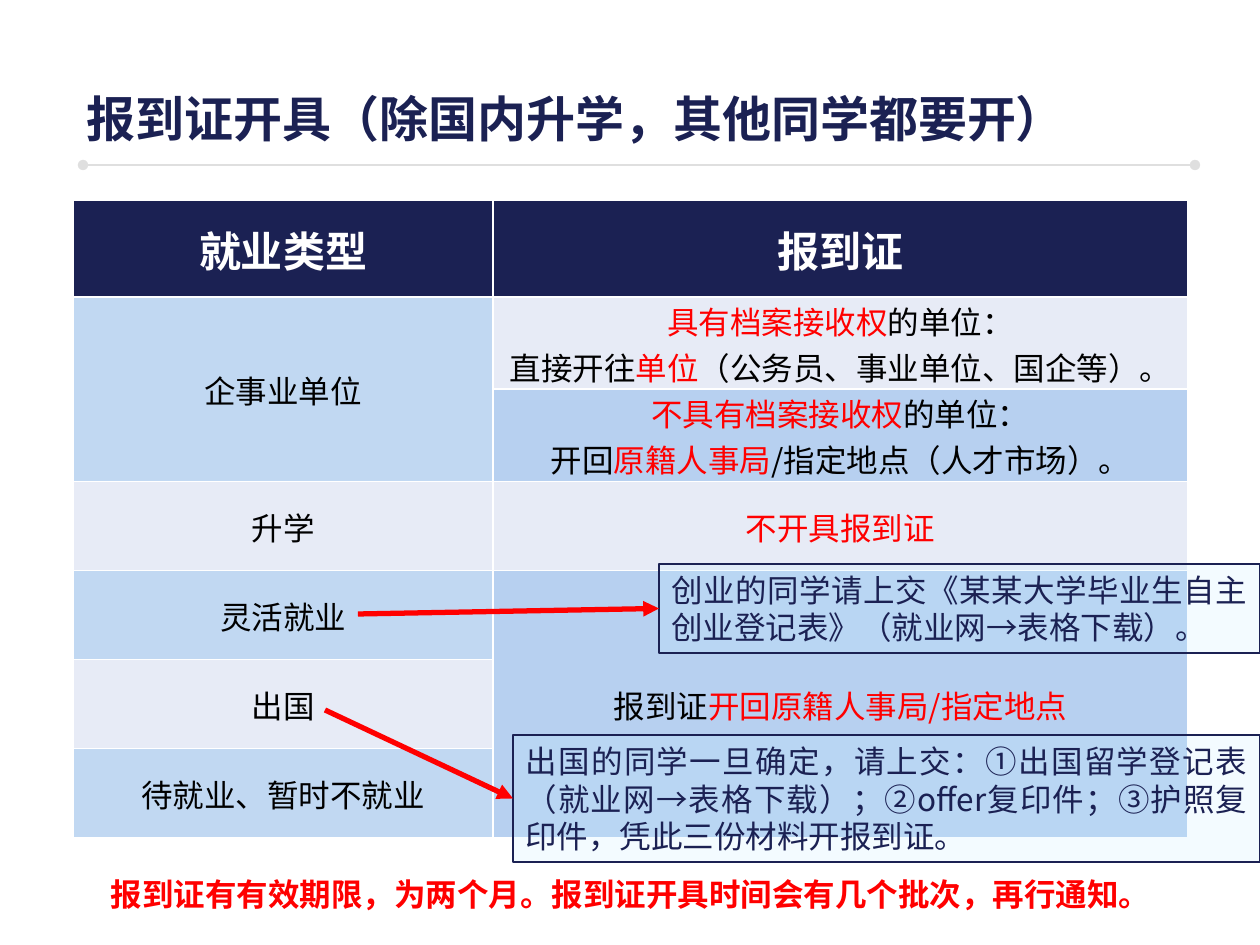
"""Build the slide on which graduates need a registration certificate."""
import pptx
import pptx.util
import pptx.dml.color
import pptx.enum.shapes
import pptx.enum.text
import pptx.oxml
import pptx.oxml.ns
import lxml.etree

PX = 914400 / 126
FONT = "Noto Sans CJK SC"
NAVY, RED, BLACK, WHITE = "1B2153", "FF0000", "000000", "FFFFFF"
PALE, LIGHT, MID = "E7EBF6", "C1D8F2", "B7D0F0"
ALIGN = pptx.enum.text.PP_ALIGN
qn = pptx.oxml.ns.qn
rgb = pptx.dml.color.RGBColor.from_string


def px(*values):
    return [pptx.util.Emu(round(v * PX)) for v in values]


def write(tf, paragraphs, size, bold=False, align=ALIGN.CENTER, spacing=None):
    for i, runs in enumerate(paragraphs):
        p = tf.paragraphs[0] if i == 0 else tf.add_paragraph()
        p.alignment = align
        if spacing:
            p.line_spacing = pptx.util.Pt(spacing)
        for text, color in runs:
            r = p.add_run()
            r.text = text
            r.font.size = pptx.util.Pt(size)
            r.font.bold = bold
            r.font.name = FONT
            r.font.color.rgb = rgb(color)
            lxml.etree.SubElement(r.font._element, qn("a:ea"), typeface=FONT)


prs = pptx.Presentation()
prs.slide_width, prs.slide_height = px(1260, 945)
s = prs.slides.add_slide(prs.slide_layouts[6])

rows = [
    [([[("就业类型", WHITE)]], NAVY), ([[("报到证", WHITE)]], NAVY)],
    [([[("企事业单位", BLACK)]], LIGHT),
     ([[("具有档案接收权", RED), ("的单位：", BLACK)],
       [("直接开往", BLACK), ("单位", RED), ("（公务员、事业单位、国企等）。", BLACK)]], PALE)],
    [([], LIGHT),
     ([[("不具有档案接收权", RED), ("的单位：", BLACK)],
       [("开回", BLACK), ("原籍人事局", RED), ("/指定地点（人才市场）。", BLACK)]], MID)],
    [([[("升学", BLACK)]], PALE), ([[("不开具报到证", RED)]], PALE)],
    [([[("灵活就业", BLACK)]], LIGHT),
     ([[("报到证", BLACK), ("开回原籍人事局/指定地点", RED)]], MID)],
    [([[("出国", BLACK)]], PALE), ([], MID)],
    [([[("待就业、暂时不就业", BLACK)]], LIGHT), ([], MID)],
]
table = s.shapes.add_table(len(rows), 2, *px(73, 200, 1115, 633)).table
for column, width in zip(table.columns, px(420, 695)):
    column.width = width
for i, row in enumerate(rows):
    table.rows[i].height = px(89 if i else 97)[0]
    for j, (paragraphs, color) in enumerate(row):
        cell = table.cell(i, j)
        cell.margin_left, cell.margin_top, cell.margin_right, cell.margin_bottom = px(1, 1, 1, 0)
        cell.vertical_anchor = pptx.enum.text.MSO_ANCHOR.MIDDLE
        write(cell.text_frame, paragraphs, 18 if i else 24, bold=i == 0)
        tcPr = cell._tc.get_or_add_tcPr()
        for side in ("a:lnL", "a:lnR", "a:lnT", "a:lnB"):
            ln = lxml.etree.SubElement(tcPr, qn(side), w="12700")
            fill = lxml.etree.SubElement(ln, qn("a:solidFill"))
            lxml.etree.SubElement(fill, qn("a:srgbClr"), val=WHITE)
        cell.fill.solid()
        cell.fill.fore_color.rgb = rgb(color)
table.cell(1, 0).merge(table.cell(2, 0))
table.cell(4, 1).merge(table.cell(6, 1))

notes = []
for box, text in [
    ((659, 564, 601, 89), "创业的同学请上交《某某大学毕业生自主创业登记表》（就业网→表格下载）。"),
    ((513, 735, 747, 127), "出国的同学一旦确定，请上交：①出国留学登记表（就业网→表格下载）；"
                           "②offer复印件；③护照复印件，凭此三份材料开报到证。"),
]:
    sp = s.shapes.add_shape(pptx.enum.shapes.MSO_SHAPE.RECTANGLE, *px(*box))
    sp.shadow.inherit = False
    sp.fill.solid()
    sp.fill.fore_color.rgb = rgb("C4EFFF")
    clr = sp._element.spPr.find(qn("a:solidFill"))[0]
    lxml.etree.SubElement(clr, qn("a:alpha"), val="20000")
    sp.line.color.rgb = rgb(NAVY)
    sp.line.width = pptx.util.Pt(0.75)
    sp.text_frame.word_wrap = True
    write(sp.text_frame, [[(text, NAVY)]], 18, align=ALIGN.JUSTIFY, spacing=21.6)
    notes.append(sp)

for box, text, size, color, align in [
    ((57, 869, 1147, 50), "报到证有有效期限，为两个月。报到证开具时间会有几个批次，再行通知。", 18, RED, ALIGN.CENTER),
    ((74, 82, 1121, 72), "报到证开具（除国内升学，其他同学都要开）", 28, NAVY, ALIGN.LEFT),
]:
    tf = s.shapes.add_textbox(*px(*box)).text_frame
    tf.word_wrap = True
    write(tf, [[(text, color)]], size, bold=True, align=align, spacing=size * 1.2)

for ends, color, width, head, tail, target in [
    ((325, 710, 513, 798), RED, 3, None, "triangle", notes[1]),
    ((358, 614, 659, 608), RED, 3, None, "triangle", notes[0]),
    ((83, 165, 1195, 165), "DFDFDF", 1, "oval", "oval", None),
]:
    line = s.shapes.add_connector(pptx.enum.shapes.MSO_CONNECTOR.STRAIGHT, *px(*ends))
    line.line.color.rgb = rgb(color)
    line.line.width = pptx.util.Pt(width)
    ln = line.line._get_or_add_ln()
    if head:
        lxml.etree.SubElement(ln, qn("a:headEnd"), type=head)
    lxml.etree.SubElement(ln, qn("a:tailEnd"), type=tail)
    lxml.etree.SubElement(line._element.spPr, qn("a:effectLst"))
    if target:
        line.end_connect(target, 1)

prs.save("out.pptx")
